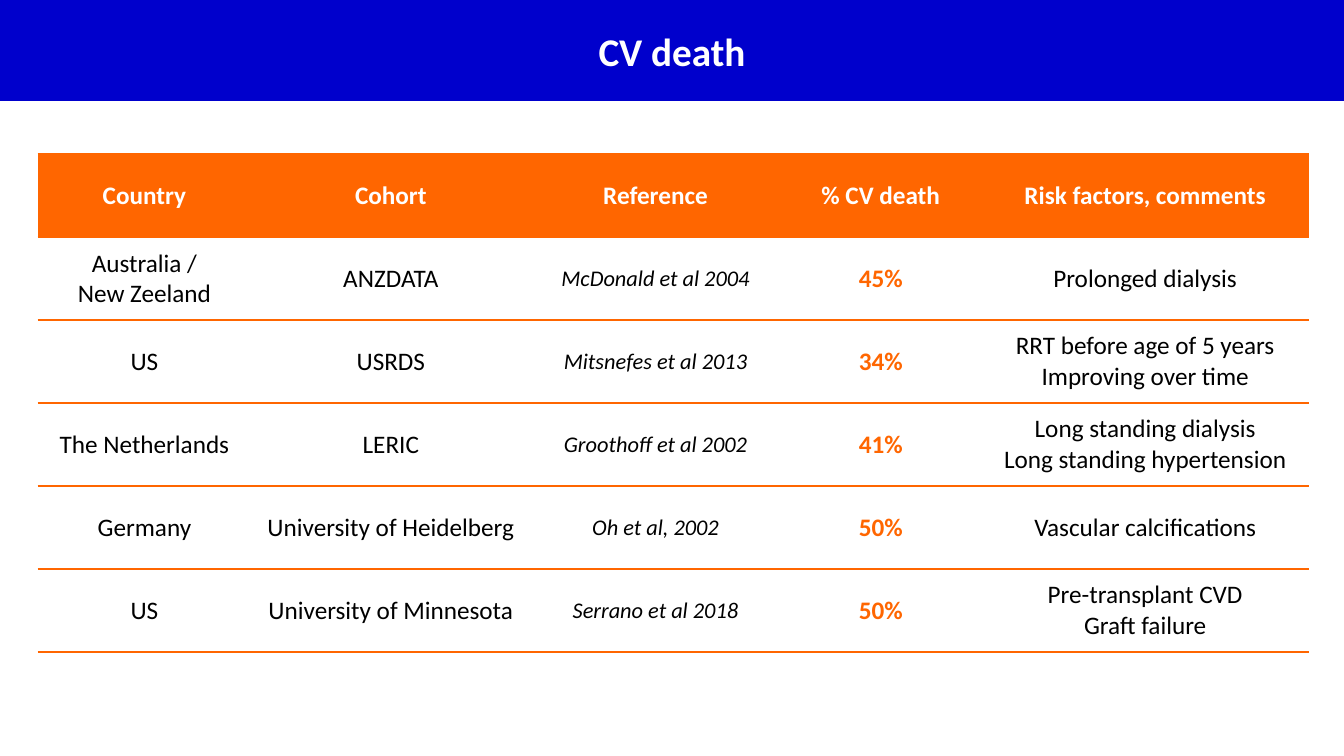
from lxml.etree import SubElement
from pptx import Presentation
from pptx.dml.color import RGBColor
from pptx.enum.text import MSO_ANCHOR, PP_ALIGN
from pptx.oxml.ns import qn
from pptx.util import Cm, Pt

BLUE, ORANGE, WHITE, BLACK = "0000CC", "FF6600", "FFFFFF", "000000"


def style_text(tf, size, color, bold=False, italic=False):
    for p in tf.paragraphs:
        p.alignment = PP_ALIGN.CENTER
        for r in p.runs:
            r.font.name = "Calibri"
            r.font.size = Pt(size)
            r.font.bold = bold
            r.font.italic = italic
            r.font.color.rgb = RGBColor.from_string(color)


def rule_cell(cell):
    """Draw orange lines above and below the cell and none at its sides."""
    tcPr = cell._tc.get_or_add_tcPr()
    for side in ("L", "R"):
        ln = SubElement(tcPr, qn(f"a:ln{side}"), w="0")
        SubElement(ln, qn("a:noFill"))
    for side in ("T", "B"):
        ln = SubElement(tcPr, qn(f"a:ln{side}"), w=str(Pt(1.5)))
        fill = SubElement(ln, qn("a:solidFill"))
        SubElement(fill, qn("a:srgbClr"), val=ORANGE)


prs = Presentation()
prs.slide_width, prs.slide_height = Cm(33.87), Cm(19.05)
s = prs.slides.add_slide(prs.slide_layouts[5])

# Title band
title = s.shapes.title
title.left, title.top = Cm(0), Cm(0)
title.width, title.height = prs.slide_width, Cm(2.54)
title.fill.solid()
title.fill.fore_color.rgb = RGBColor.from_string(BLUE)
title.text_frame.text = "CV death"
title.text_frame.vertical_anchor = MSO_ANCHOR.MIDDLE
style_text(title.text_frame, 28, WHITE, bold=True)

# Cohort table
rows = [
    ("Country", "Cohort", "Reference", "% CV death", "Risk factors, comments"),
    ("Australia /\vNew Zeeland", "ANZDATA", "McDonald et al 2004", "45%",
     "Prolonged dialysis"),
    ("US", "USRDS", "Mitsnefes et al 2013", "34%",
     "RRT before age of 5 years\vImproving over time"),
    ("The Netherlands", "LERIC", "Groothoff et al 2002", "41%",
     "Long standing dialysis\nLong standing hypertension"),
    ("Germany", "University of Heidelberg", "Oh et al, 2002", "50%",
     "Vascular calcifications"),
    ("US", "University of Minnesota", "Serrano et al 2018", "50%",
     "Pre-transplant CVD\nGraft failure"),
]
widths = [5.38, 7.04, 6.3, 5.05, 8.28]
row_height = 2.09
REFERENCE, PERCENT = 2, 3

table = s.shapes.add_table(len(rows), len(widths), Cm(0.95), Cm(3.89),
                           Cm(sum(widths)), Cm(row_height * len(rows))).table
table.horz_banding = False
for column, width in zip(table.columns, widths):
    column.width = Cm(width)

for i, row in enumerate(rows):
    table.rows[i].height = Cm(row_height)
    for j, text in enumerate(row):
        cell = table.cell(i, j)
        cell.text_frame.text = text
        cell.vertical_anchor = MSO_ANCHOR.MIDDLE
        cell.margin_left = cell.margin_right = Cm(0.13)
        cell.margin_top = cell.margin_bottom = Cm(0.13)
        rule_cell(cell)
        if i == 0:
            cell.fill.solid()
            cell.fill.fore_color.rgb = RGBColor.from_string(ORANGE)
            style_text(cell.text_frame, 18, WHITE, bold=True)
            continue
        cell.fill.background()
        if j == REFERENCE:
            style_text(cell.text_frame, 16, BLACK, italic=True)
        elif j == PERCENT:
            style_text(cell.text_frame, 18, ORANGE, bold=True)
        else:
            style_text(cell.text_frame, 18, BLACK)

prs.save("out.pptx")
